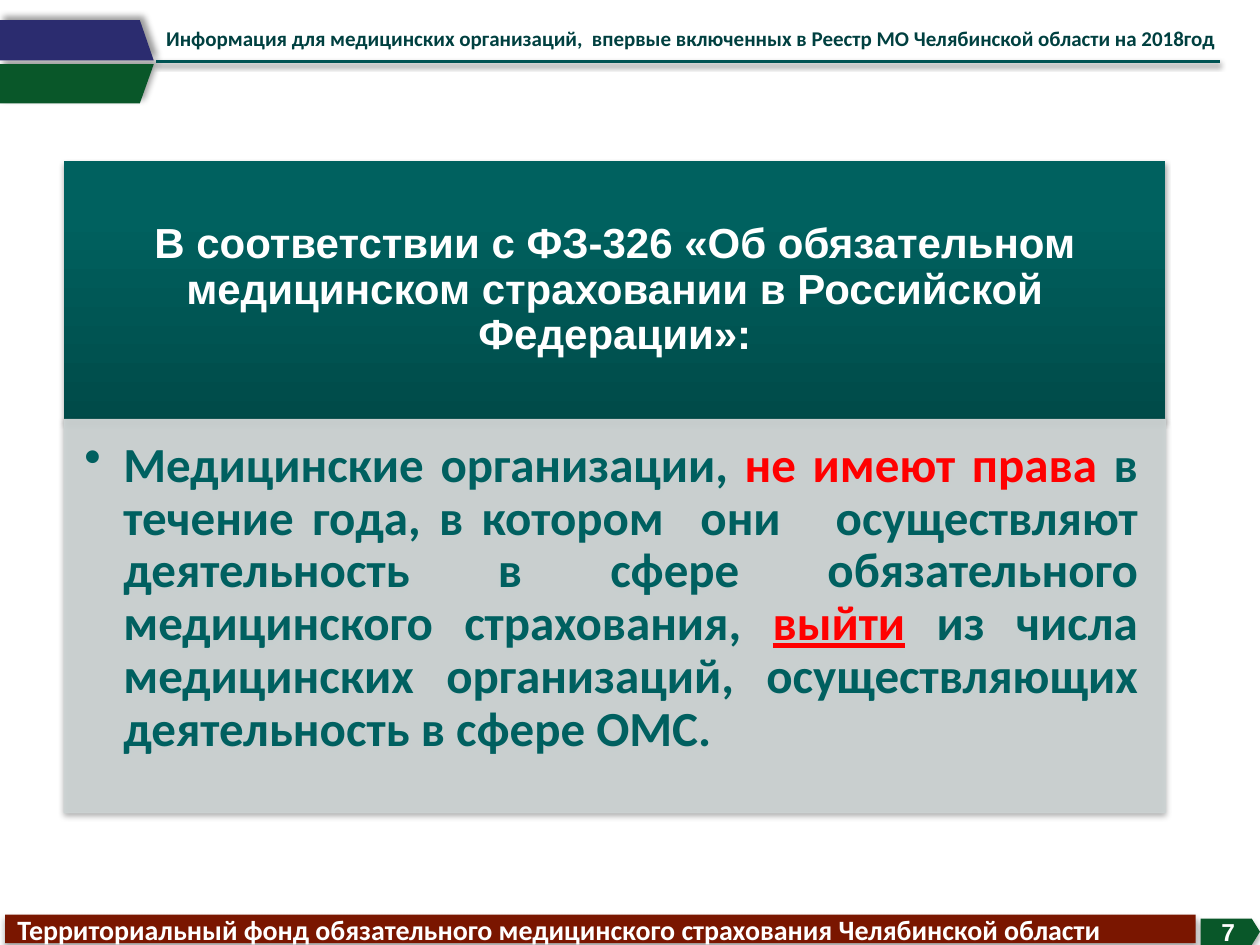
from lxml.etree import SubElement
from pptx import Presentation
from pptx.dml.color import RGBColor as RGB
from pptx.enum.shapes import MSO_CONNECTOR as Connector, MSO_SHAPE as Preset
from pptx.enum.text import MSO_ANCHOR as Anchor, PP_ALIGN as Align
from pptx.oxml.ns import qn
from pptx.util import Inches, Pt

COLORS = {
    "white": "FFFFFF", "black": "000000", "red": "FF0000",
    "green": "095729", "blue": "2B2C6F", "maroon": "7A1600",
    "rule": "005353", "heading": "004040", "body": "006060",
    "teal": "00615F", "dark teal": "004B49", "grey": "CCD3D3",
}

deck = Presentation()
deck.slide_width, deck.slide_height = Inches(10), Inches(7.5)
page = deck.slides.add_slide(deck.slide_layouts[6])
# The grid has 100 columns and 100 rows
COL, ROW = deck.slide_width // 100, deck.slide_height // 100


def add_shadow(shape, alpha, blur, distance, angle):
    """Add an outer shadow; call it after fill and line are set."""
    effects = SubElement(shape._element.spPr, qn("a:effectLst"))
    outer = SubElement(effects, qn("a:outerShdw"), blurRad=str(Pt(blur)),
                       dist=str(Pt(distance)), dir=str(angle * 60000),
                       algn="ctr", rotWithShape="0")
    color = SubElement(outer, qn("a:srgbClr"), val=COLORS["black"])
    SubElement(color, qn("a:alpha"), val=str(alpha * 1000))


def write_text(shape, spans, font, size, frame_format=None, para_format=None):
    """Fill the shape with one bold paragraph of (text, colour, underline) spans."""
    frame = shape.text_frame
    for name, value in {"word_wrap": True, **(frame_format or {})}.items():
        setattr(frame, name, value)
    para = frame.paragraphs[0]
    for name, value in {"alignment": Align.LEFT, **(para_format or {})}.items():
        setattr(para, name, value)
    for text, color, underline in spans:
        span = para.add_run()
        span.text = text
        for name, value in {"name": font, "size": Pt(size), "bold": True,
                            "underline": underline}.items():
            setattr(span.font, name, value)
        span.font.color.rgb = RGB.from_string(COLORS[color])
    return para


# Corner flags: colour, outer row, inner row of the slanted edge
for color, wide_row, narrow_row in (("green", 6.8, 10.93), ("blue", 6.4, 2.13)):
    outline = page.shapes.build_freeform(0, int(wide_row * ROW))
    outline.add_line_segments([
        (int(12.2 * COL), int(wide_row * ROW)),
        (int(11.1 * COL), int(narrow_row * ROW)),
        (0, int(narrow_row * ROW)),
    ])
    flag = outline.convert_to_shape()
    flag.fill.solid()
    flag.fill.fore_color.rgb = RGB.from_string(COLORS[color])
    flag.line.fill.background()
    add_shadow(flag, 40, 4, 3, 315)

# Header
rule = page.shapes.add_connector(Connector.STRAIGHT, int(12.4 * COL), int(6.53 * ROW),
                                 int(96.8 * COL), int(6.53 * ROW))
rule.line.color.rgb = RGB.from_string(COLORS["rule"])
rule.line.width = Pt(2)
add_shadow(rule, 38, 3.1, 1.6, 90)

header = page.shapes.add_textbox(int(12.2 * COL), 2 * ROW, int(87.8 * COL), int(8.13 * ROW))
write_text(header, [("Информация для медицинских организаций,  впервые включенных "
                     "в Реестр МО Челябинской области на 2018год", "heading", False)],
           "Calibri", 12)

# Boxes: preset, left, top, width, height, colour, shadow
boxes = {}
for name, preset, left, top, width, height, color, shadow in (
    ("title", Preset.RECTANGLE, 5.1, 17.07, 87.4, 27.33, "teal", (35, 3.1, 1.8, 90)),
    ("body", Preset.RECTANGLE, 5.1, 44.4, 87.4, 41.6, "grey", (35, 3.1, 1.8, 90)),
    ("footer", Preset.RECTANGLE, 0.4, 96.8, 94.5, 3, "maroon", (32, 3.5, 2.2, 90)),
    ("number", Preset.PENTAGON, 95.3, 97.2, 4.7, 2.8, "green", (32, 3.5, 2.2, 90)),
):
    box = boxes[name] = page.shapes.add_shape(
        preset, int(left * COL), int(top * ROW), int(width * COL), int(height * ROW))
    box.line.fill.background()
    if name == "title":
        box.fill.gradient()
        box.fill.gradient_angle = 90
        for stop, position, shade in zip(box.fill.gradient_stops, (0, 0.8),
                                         ("dark teal", "teal")):
            stop.position = position
            stop.color.rgb = RGB.from_string(COLORS[shade])
    else:
        box.fill.solid()
        box.fill.fore_color.rgb = RGB.from_string(COLORS[color])
    if name == "body":
        box.line.color.rgb = RGB.from_string(COLORS[color])
        box.line.width = Pt(0.75)
        for tint in list(box._element.spPr.iter(qn("a:srgbClr"))):
            SubElement(tint, qn("a:alpha"), val="90000")
    add_shadow(box, *shadow)
boxes["number"].adjustments[0] = 0.31

write_text(
    boxes["title"],
    [("В соответствии с ФЗ-326 «Об обязательном медицинском страховании "
      "в Российской Федерации»:", "white", False)],
    "Arial", 24,
    {"vertical_anchor": Anchor.MIDDLE, "margin_left": Inches(0.19),
     "margin_right": Inches(0.19), "margin_top": Inches(0.11),
     "margin_bottom": Inches(0.11)},
    {"alignment": Align.CENTER, "line_spacing": 0.9})

bullet = write_text(
    boxes["body"],
    [("Медицинские организации, ", "body", False),
     ("не имеют права ", "red", False),
     ("в течение года, в котором  они   осуществляют деятельность в сфере "
      "обязательного медицинского страхования, ", "body", False),
     ("выйти", "red", True),
     (" из числа медицинских организаций, осуществляющих деятельность "
      "в сфере ОМС.", "body", False)],
    "Calibri", 28,
    {"vertical_anchor": Anchor.TOP, "margin_left": Inches(0.16),
     "margin_right": Inches(0.22), "margin_top": Inches(0.16),
     "margin_bottom": Inches(0.24)},
    {"alignment": Align.JUSTIFY, "line_spacing": 0.9})
bullet_format = bullet._p.get_or_add_pPr()
bullet_format.set("marL", str(Inches(0.31)))
bullet_format.set("indent", str(-Inches(0.31)))
SubElement(bullet_format, qn("a:buChar"), char="•")

write_text(boxes["footer"],
           [("Территориальный фонд обязательного медицинского страхования "
             "Челябинской области", "white", False)],
           "Calibri", 16, {"vertical_anchor": Anchor.MIDDLE})
write_text(boxes["number"], [("7", "white", False)], "Arial", 14,
           {"vertical_anchor": Anchor.MIDDLE}, {"alignment": Align.CENTER})

deck.save("out.pptx")
